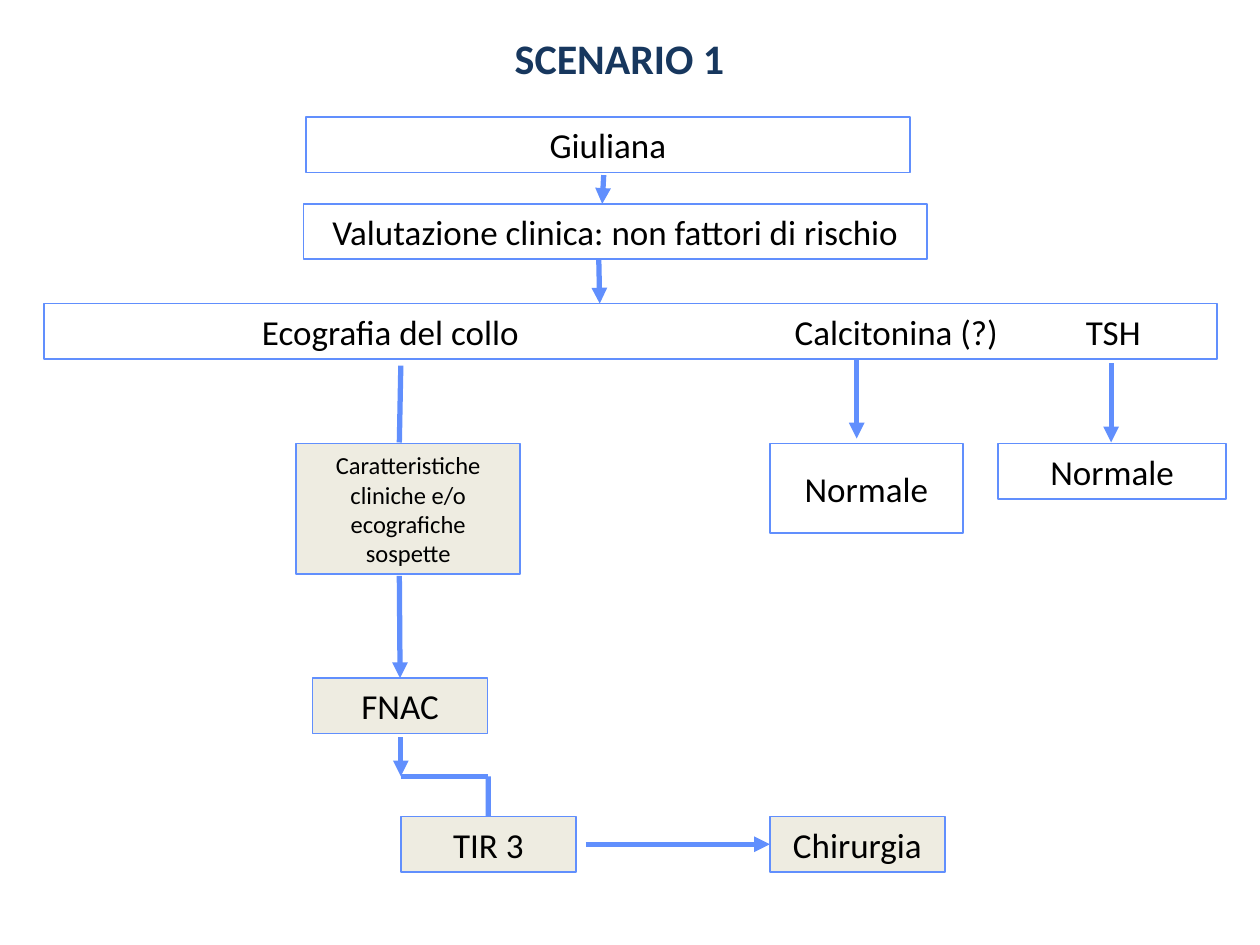
import pptx
import pptx.dml.color
import pptx.enum.shapes
import pptx.enum.text
import pptx.oxml.ns
import pptx.util
from lxml import etree

Cm = pptx.util.Cm
Pt = pptx.util.Pt
qn = pptx.oxml.ns.qn

COLORS = {"line": "618FFD", "highlight": "EEECE1", "text": "000000", "title": "17375E"}
FONT = "Calibri"
ROW = 1.12  # height of a one-line box, cm
SMALL = 3.53  # width of a small box, cm


def color(name):
    return pptx.dml.color.RGBColor.from_string(COLORS[name])


def format_text(para, size, color_name, bold=False):
    para.font.name = FONT
    para.font.size = Pt(size)
    para.font.bold = bold
    para.font.color.rgb = color(color_name)


def add_box(page, origin, left, top, width, text, height=ROW, size=20, highlight=False):
    box = page.shapes.add_shape(
        pptx.enum.shapes.MSO_SHAPE.RECTANGLE,
        Cm(origin[0] + left), Cm(origin[1] + top), Cm(width), Cm(height))
    box.shadow.inherit = False
    if highlight:
        box.fill.solid()
        box.fill.fore_color.rgb = color("highlight")
    else:
        box.fill.background()
    box.line.color.rgb = color("line")
    box.line.width = Pt(1)
    frame = box.text_frame
    frame.word_wrap = True
    frame.vertical_anchor = pptx.enum.text.MSO_ANCHOR.MIDDLE
    para = frame.paragraphs[0]
    para.text = text
    para.alignment = pptx.enum.text.PP_ALIGN.CENTER
    format_text(para, size, "text")
    return box


def add_line(page, origin, start, end, arrow=True):
    line = page.shapes.add_connector(
        pptx.enum.shapes.MSO_CONNECTOR.STRAIGHT,
        Cm(origin[0] + start[0]), Cm(origin[1] + start[1]),
        Cm(origin[0] + end[0]), Cm(origin[1] + end[1]))
    line.line.color.rgb = color("line")
    line.line.width = Pt(3)
    if arrow:
        etree.SubElement(line.line._get_or_add_ln(), qn("a:tailEnd"), type="triangle")
    etree.SubElement(line._element.spPr, qn("a:effectLst"))
    return line


def set_tabs(para, stops):
    properties = para._p.get_or_add_pPr()
    tabs = etree.Element(qn("a:tabLst"))
    for stop in stops:
        etree.SubElement(tabs, qn("a:tab"), pos=str(int(Cm(stop))), algn="l")
    # Tab stops come before the default run properties
    properties.insert(0, tabs)


def build_title(page, left, top, width, height):
    title = page.shapes.title
    title.left, title.top, title.width, title.height = map(Cm, (left, top, width, height))
    title.text_frame.text = "SCENARIO 1"
    title.text_frame.vertical_anchor = pptx.enum.text.MSO_ANCHOR.MIDDLE
    para = title.text_frame.paragraphs[0]
    para.alignment = pptx.enum.text.PP_ALIGN.CENTER
    format_text(para, 24, "title", bold=True)


def build_assessment(page, left, top):
    """Patient, clinical assessment and the row of examinations."""
    origin = (left, top)
    add_box(page, origin, 5.28, 0, 12.17, "Giuliana")
    add_line(page, origin, (11.28, 1.17), (11.25, 1.75))
    add_box(page, origin, 5.23, 1.75, 12.57, "Valutazione clinica: non fattori di rischio")
    add_line(page, origin, (11.18, 2.85), (11.2, 3.76))
    exams = add_box(page, origin, 0, 3.76, 23.65,
                    "\tEcografia del collo\tCalcitonina (?)\tTSH")
    para = exams.text_frame.paragraphs[0]
    para.alignment = pptx.enum.text.PP_ALIGN.LEFT
    set_tabs(para, (4.14, 14.88, 20.75))


def build_blood_tests(page, left, top):
    """Results of calcitonin and TSH."""
    origin = (left, top)
    add_line(page, origin, (1.75, 0), (1.75, 1.6))
    add_box(page, origin, 0, 1.7, 3.89, "Normale", height=1.8)
    add_line(page, origin, (6.88, 0.08), (6.88, 1.68))
    add_box(page, origin, 4.6, 1.7, 4.6, "Normale")


def build_ultrasound(page, left, top):
    """From suspicious ultrasound to cytology and surgery."""
    origin = (left, top)
    add_line(page, origin, (2.11, 0), (2.08, 1.55), arrow=False)
    add_box(page, origin, 0, 1.57, 4.52,
            "Caratteristiche cliniche e/o ecografiche sospette",
            height=2.64, size=14, highlight=True)
    cytology = add_box(page, origin, 0.33, 6.3, SMALL, "FNAC", highlight=True)
    add_line(page, origin, (2.08, 4.24), (2.08, 6.3)).end_connect(cytology, 0)

    # Stepped path from cytology to its class
    add_line(page, origin, (2.11, 7.49), (2.11, 8.28))
    add_line(page, origin, (2.11, 8.28), (3.87, 8.28), arrow=False)
    category = add_box(page, origin, 2.11, 9.09, SMALL, "TIR 3", highlight=True)
    add_line(page, origin, (3.87, 8.28), (3.87, 9.09), arrow=False).end_connect(category, 0)

    surgery = add_box(page, origin, 9.55, 9.09, SMALL, "Chirurgia", highlight=True)
    add_line(page, origin, (5.84, 9.65), (9.55, 9.65)).end_connect(surgery, 1)


def main():
    deck = pptx.Presentation()
    deck.slide_width, deck.slide_height = Cm(25.4), Cm(19.05)
    page = deck.slides.add_slide(deck.slide_layouts.get_by_name("Title Only"))
    build_title(page, 6.65, 0.53, 11.68, 1.27)
    build_assessment(page, 0.89, 2.36)
    build_blood_tests(page, 15.52, 7.24)
    build_ultrasound(page, 5.97, 7.37)
    deck.save("out.pptx")


if __name__ == "__main__":
    main()
